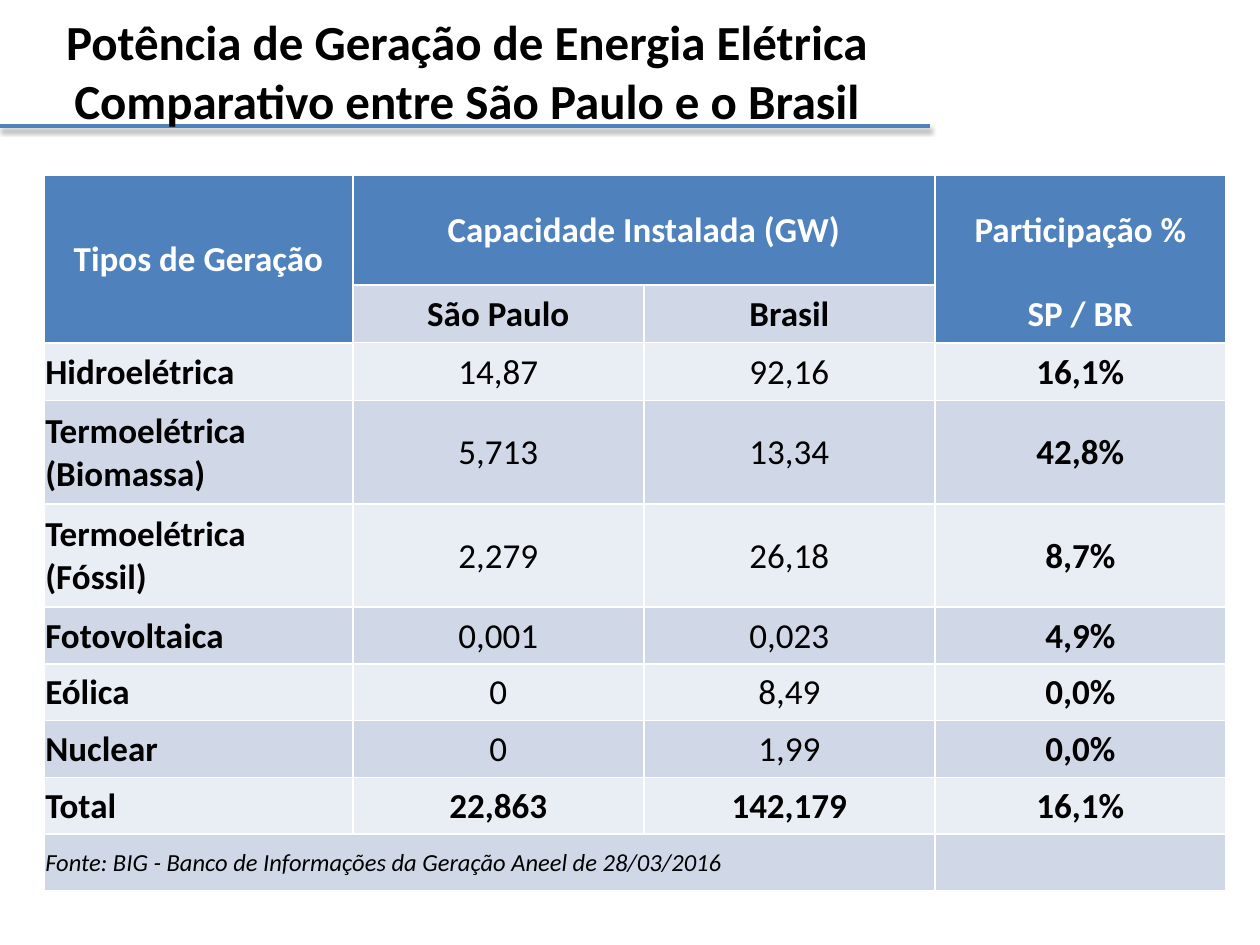
import lxml.etree
import pptx
import pptx.dml.color
import pptx.enum.shapes
import pptx.enum.text
import pptx.oxml
import pptx.oxml.ns
import pptx.util

Inches, Pt = pptx.util.Inches, pptx.util.Pt
RGBColor = pptx.dml.color.RGBColor
ALIGN = pptx.enum.text.PP_ALIGN
MIDDLE = pptx.enum.text.MSO_ANCHOR.MIDDLE
qn = pptx.oxml.ns.qn

# Content
TITLE = "Potência de Geração de Energia Elétrica\vComparativo entre São Paulo e o Brasil"
ROWS = [
    ("Tipos de Geração", "Capacidade Instalada (GW)", "", "Participação %"),
    ("", "São Paulo", "Brasil", "SP / BR"),
    ("Hidroelétrica", "14,87", "92,16", "16,1%"),
    ("Termoelétrica (Biomassa)", "5,713", "13,34", "42,8%"),
    ("Termoelétrica (Fóssil)", "2,279", "26,18", "8,7%"),
    ("Fotovoltaica", "0,001", "0,023", "4,9%"),
    ("Eólica", "0", "8,49", "0,0%"),
    ("Nuclear", "0", "1,99", "0,0%"),
    ("Total", "22,863", "142,179", "16,1%"),
    ("Fonte: BIG - Banco de Informações da Geração Aneel de 28/03/2016", "", "", ""),
]
MERGES = [((0, 0), (1, 0)), ((0, 1), (0, 2)), ((9, 0), (9, 2))]
COLUMN_WIDTHS = [2.45, 2.31, 2.31, 2.31]
ROW_HEIGHTS = [0.87, 0.46, 0.46, 0.82, 0.82] + [0.45] * 5
HEADER_ROWS = 2
TOTAL_ROW, SOURCE_ROW = 8, 9
LAST_COLUMN = 3

# Style
FONT = "Calibri"
BLACK = RGBColor(0x00, 0x00, 0x00)
WHITE = RGBColor(0xFF, 0xFF, 0xFF)
BLUE = RGBColor(0x4F, 0x81, 0xBD)
BAND_DARK = RGBColor(0xD0, 0xD8, 0xE8)
BAND_LIGHT = RGBColor(0xE9, 0xED, 0xF4)


def format_font(font, size, color, bold, italic=False):
    font.name, font.size, font.bold, font.italic = FONT, Pt(size), bold, italic
    font.color.rgb = color


def add_borders(cell, widths):
    """Draw white borders; widths maps L, R, T, B to points, 0 meaning none."""
    properties = cell._tc.get_or_add_tcPr()
    for position, (side, width) in enumerate(widths.items()):
        border = lxml.etree.Element(qn(f"a:ln{side}"), w=str(Pt(width)))
        if width:
            fill = lxml.etree.SubElement(border, qn("a:solidFill"))
            lxml.etree.SubElement(fill, qn("a:srgbClr"), val=str(WHITE))
        else:
            lxml.etree.SubElement(border, qn("a:noFill"))
        properties.insert(position, border)


def is_header(row, column):
    return row == 0 or (row < HEADER_ROWS and column in (0, LAST_COLUMN))


def border_widths(row, column):
    widths = {"L": 1, "R": 1, "T": 1, "B": 1}
    if column == LAST_COLUMN and row < HEADER_ROWS:
        widths["B" if row == 0 else "T"] = 0
        if row == 1:
            widths["B"] = 1.5
    elif is_header(row, column):
        widths["B"] = 1.5
    elif is_header(row - 1, column):
        widths["T"] = 1.5
    return widths


def format_cell(cell, row, column, text):
    header = is_header(row, column)
    cell.fill.solid()
    cell.fill.fore_color.rgb = BLUE if header else (BAND_DARK if row % 2 else BAND_LIGHT)
    add_borders(cell, border_widths(row, column))
    cell.vertical_anchor = MIDDLE
    cell.margin_left = cell.margin_right = cell.margin_top = Inches(0.01)
    cell.margin_bottom = 0
    if not text:
        return
    cell.text_frame.text = text
    paragraph = cell.text_frame.paragraphs[0]
    left = column == 0 and row >= HEADER_ROWS
    paragraph.alignment = ALIGN.LEFT if left else ALIGN.CENTER
    source = row == SOURCE_ROW
    plain_value = HEADER_ROWS <= row < TOTAL_ROW and column in (1, 2)
    for run in paragraph.runs:
        format_font(run.font, 14 if source else 20, WHITE if header else BLACK,
                    not (source or plain_value), source)


presentation = pptx.Presentation()
presentation.slide_width, presentation.slide_height = Inches(10), Inches(7.5)
slide = presentation.slides.add_slide(presentation.slide_layouts[5])

# Title
title = slide.shapes.title
title.left, title.top = Inches(0.12), Inches(0.21)
title.width, title.height = Inches(7.17), Inches(0.7)
title.text_frame.text = TITLE
title.text_frame.auto_size = pptx.enum.text.MSO_AUTO_SIZE.NONE
title.text_frame.vertical_anchor = MIDDLE
title.text_frame.paragraphs[0].alignment = ALIGN.CENTER
for run in title.text_frame.paragraphs[0].runs:
    format_font(run.font, 28, BLACK, True)

# Rule under the title, with a soft shadow, behind the text
rule = slide.shapes.add_connector(
    pptx.enum.shapes.MSO_CONNECTOR.STRAIGHT, 0, Inches(1), Inches(7.38), Inches(1))
rule.line.color.rgb = BLUE
rule.line.width = Pt(2)
rule._element.spPr.append(pptx.oxml.parse_xml(
    '<a:effectLst xmlns:a="http://schemas.openxmlformats.org/drawingml/2006/main">'
    '<a:outerShdw blurRad="40000" dist="20000" dir="5400000" rotWithShape="0">'
    '<a:srgbClr val="000000"><a:alpha val="38000"/></a:srgbClr>'
    '</a:outerShdw></a:effectLst>'))
title._element.addprevious(rule._element)

# Table
table = slide.shapes.add_table(
    len(ROWS), len(COLUMN_WIDTHS), Inches(0.35), Inches(1.39),
    Inches(sum(COLUMN_WIDTHS)), Inches(sum(ROW_HEIGHTS))).table
for column, width in zip(table.columns, COLUMN_WIDTHS):
    column.width = Inches(width)
for row, height in zip(table.rows, ROW_HEIGHTS):
    row.height = Inches(height)
for row, texts in enumerate(ROWS):
    for column, text in enumerate(texts):
        format_cell(table.cell(row, column), row, column, text)
for first, last in MERGES:
    table.cell(*first).merge(table.cell(*last))

presentation.save("out.pptx")
